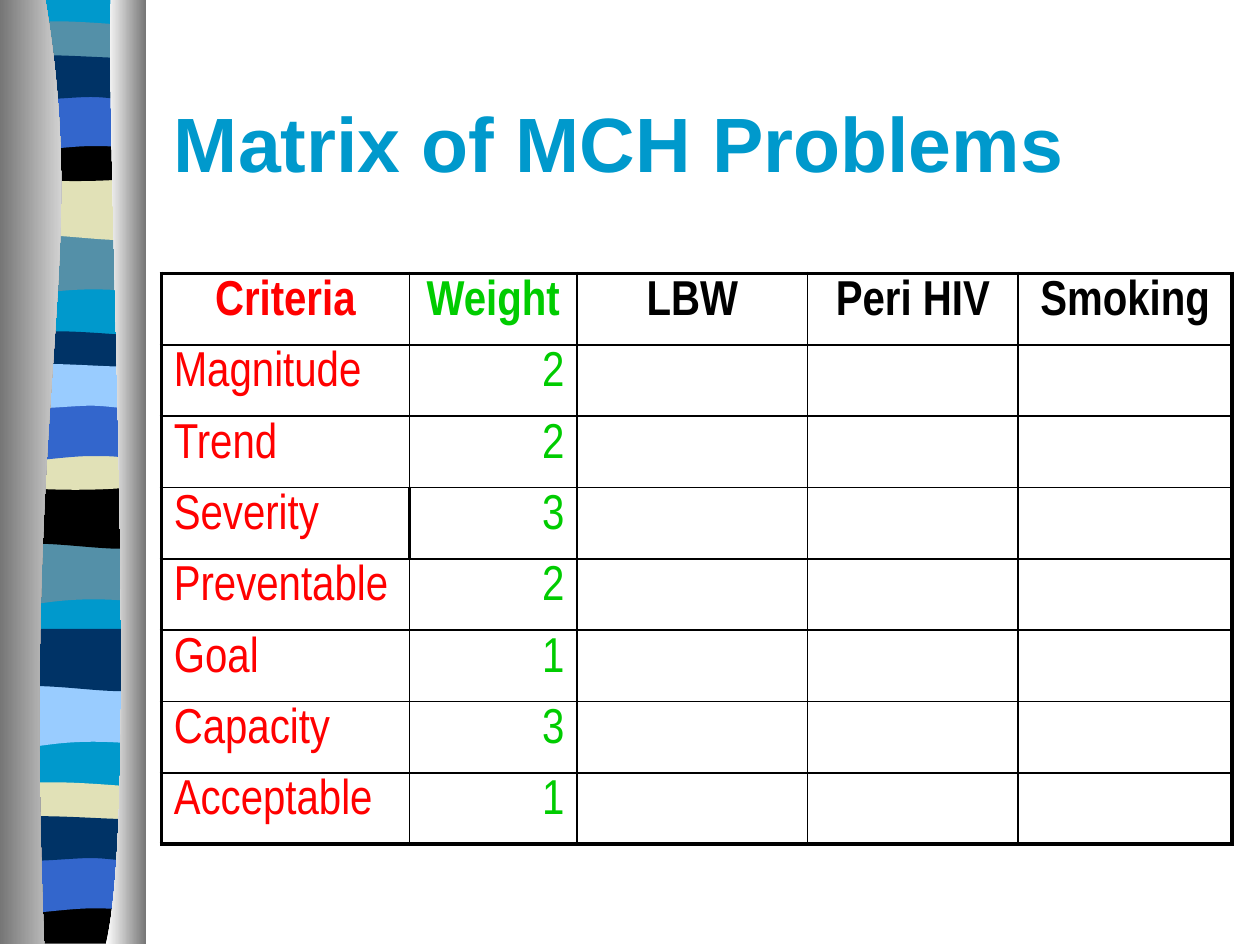
from lxml import etree
from pptx import Presentation
from pptx.dml.color import RGBColor
from pptx.enum.shapes import MSO_SHAPE
from pptx.enum.text import MSO_ANCHOR, PP_ALIGN
from pptx.oxml.ns import qn
from pptx.util import Inches, Pt

LEFT, CENTER, RIGHT = PP_ALIGN.LEFT, PP_ALIGN.CENTER, PP_ALIGN.RIGHT
RED, GREEN = RGBColor(0xFF, 0, 0), RGBColor(0, 0xCC, 0)
BLACK, CYAN = RGBColor(0, 0, 0), RGBColor(0, 0x99, 0xCC)
TEAL, SAND = RGBColor(0x54, 0x90, 0xA8), RGBColor(0xE1, 0xE1, 0xB7)
BLUE, NAVY = RGBColor(0x33, 0x66, 0xCC), RGBColor(0, 0x33, 0x66)
SKY, WHITE = RGBColor(0x99, 0xCC, 0xFF), RGBColor(0xFF, 0xFF, 0xFF)
GRAY = RGBColor(0x76, 0x76, 0x76)

# Content
TITLE = "Matrix of MCH Problems"
HEADS = [("Criteria", RED), ("Weight", GREEN), ("LBW", BLACK),
         ("Peri HIV", BLACK), ("Smoking", BLACK)]
ROWS = [("Magnitude", 2), ("Trend", 2), ("Severity", 3), ("Preventable", 2),
        ("Goal", 1), ("Capacity", 3), ("Acceptable", 1)]
COLS = [1.97, 1.33, 1.83, 1.67, 1.7]
X, WIDE = 1.28, 8.5
TOP, TALL = 2.17, 4.53
THIN, THICK = 1, 2.25

# Wave edges: Bezier points below a band's top; two points make a straight line
L, R = 0.05, 1.14
FLAT = [(L, 0), (R, 0)]
SAG = [(L, 0), (0.72, 0.05), (0.91, 0), (R, 0)]
CREST = [(L, 0), (0.12, -0.05), (0.29, -0.04), (0.47, -0.04),
         (0.65, -0.04), (1, -0.01), (R, 0)]
RIPPLE = [(L, 0), (0.2, -0.05), (0.79, 0), (0.97, 0),
          (1.15, 0), (1.1, 0), (R, 0)]
BOWL = [(R, 0), (0.96, 0.05), (0.24, 0.05), (L, 0)]
WAVES = {  # top edge, bottom edge, height
    "swell": (FLAT, [(R, 0), (0.39, -0.08), (0.24, 0.08), (L, 0)], 0.47),
    "dip": (FLAT, [(R, 0), (0.96, 0.08), (0.39, -0.06), (L, 0)], 0.47),
    "crest": (CREST, BOWL, 0.24),
    "sag": (SAG, BOWL, 0.32),
    "arch": (FLAT, [(R, 0), (0.97, -0.05), (0.9, -0.05), (0.72, -0.05),
                    (0.54, -0.05), (0.22, 0), (L, 0)], 0.47),
    "ripple": (RIPPLE, [(R, 0), (1.07, 0.05), (0.9, 0), (0.72, 0),
                        (0.54, 0), (0.17, 0.05), (L, 0)], 0.31),
    "floor": (SAG, FLAT[::-1], 0.37),
}
BANDS = [  # wave, top, colour, from back to front
    ("swell", 1.85, TEAL), ("dip", 1.41, SAND), ("crest", 0.21, TEAL),
    ("sag", 1.08, BLACK), ("arch", 0.74, BLUE), ("ripple", 0.46, NAVY),
    ("swell", 4.31, TEAL), ("dip", 3.86, BLACK), ("crest", 2.67, NAVY),
    ("sag", 3.53, SAND), ("arch", 3.2, BLUE), ("ripple", 2.91, SKY),
    ("swell", 5.44, SKY), ("dip", 4.99, NAVY), ("crest", 6.25, SAND),
    ("floor", 7.12, BLACK), ("arch", 6.79, BLUE), ("ripple", 6.5, NAVY),
]
DRAPES = [  # outer x, inner edge, colours from left to right
    (0, [(0.36, 0), (0.72, 2.16), (0.17, 2.96), (0.35, 7.49)], GRAY, WHITE),
    (1.16, [(0.88, 0), (0.84, 1.25), (1.11, 6.46), (0.84, 7.49)], WHITE, GRAY),
]


def strip(shape):
    shape.shadow.inherit = False
    shape.line.fill.background()
    return shape.fill


def outline(slide, *edges):
    """Closed shape; each edge of more than two points becomes cubic curves."""
    pts = [(Inches(x), Inches(y)) for edge in edges for x, y in edge]
    pen = slide.shapes.build_freeform(*pts[0])
    pen.add_line_segments(pts[1:], close=True)
    shape = pen.convert_to_shape()
    route = shape._element.find(".//" + qn("a:path"))
    nodes, start = list(route), 0
    for edge in edges:
        end = start + len(edge)
        if len(edge) > 2:
            for i in range(start + 1, end, 3):
                curve = etree.Element(qn("a:cubicBezTo"))
                nodes[i].addprevious(curve)
                for node in nodes[i:i + 3]:
                    curve.append(node[0])
                    route.remove(node)
        start = end
    return strip(shape)


def draw_side(slide):
    base = strip(slide.shapes.add_shape(
        MSO_SHAPE.RECTANGLE, Inches(L), 0, Inches(R - L), Inches(7.47)))
    base.solid()
    base.fore_color.rgb = CYAN
    for wave, y, color in BANDS:
        top, low, high = WAVES[wave]
        fill = outline(slide, [(x, y + d) for x, d in top],
                       [(x, y + high + d) for x, d in low])
        fill.solid()
        fill.fore_color.rgb = color
    for x, edge, first, last in DRAPES:
        fill = outline(slide, edge, [(x, 7.49), (x, 0)])
        fill.gradient()
        fill.gradient_angle = 0
        for stop, color in zip(fill.gradient_stops, (first, last)):
            stop.color.rgb = color


def set_lines(cell, sizes):
    props = cell._tc.get_or_add_tcPr()
    for i, (side, size) in enumerate(zip("LRTB", sizes)):
        line = etree.Element(qn(f"a:ln{side}"), w=str(Pt(size)))
        fill = etree.SubElement(line, qn("a:solidFill"))
        etree.SubElement(fill, qn("a:srgbClr"), val=str(BLACK))
        props.insert(i, line)


def draw_table(slide):
    count, last = len(ROWS) + 1, len(COLS) - 1
    table = slide.shapes.add_table(count, len(COLS), Inches(X), Inches(TOP),
                                   Inches(WIDE), Inches(TALL)).table
    table.first_row = table.horz_banding = False
    for col, wide in zip(table.columns, COLS):
        col.width = Inches(wide)
    grid = [[text for text, _ in HEADS]]
    grid += [[name, str(weight), "", "", ""] for name, weight in ROWS]
    for r, row in enumerate(grid):
        for c, text in enumerate(row):
            cell = table.cell(r, c)
            cell.fill.background()
            split = row[0] == "Severity"  # heavier line beside this name
            heavy = (c == 0 or split and c == 1, c == last or split and c == 0,
                     r == 0, r == count - 1)
            set_lines(cell, [THICK if h else THIN for h in heavy])
            if text:
                cell.text = text
                para = cell.text_frame.paragraphs[0]
                para.alignment = CENTER if r == 0 else (LEFT, RIGHT)[c]
                font = para.font
                font.name, font.size, font.bold = "Arial Narrow", Pt(28), r == 0
                font.color.rgb = HEADS[c][1]


def main():
    deck = Presentation()
    deck.slide_width, deck.slide_height = Inches(10), Inches(7.5)
    slide = deck.slides.add_slide(deck.slide_layouts[5])
    draw_side(slide)

    # Title
    title = slide.shapes.title
    title.left, title.top = Inches(X), Inches(0.5)
    title.width, title.height = Inches(WIDE), Inches(1.25)
    title.text = TITLE
    title.text_frame.vertical_anchor = MSO_ANCHOR.MIDDLE
    para = title.text_frame.paragraphs[0]
    para.alignment = LEFT
    para.font.name, para.font.size, para.font.bold = "Arial", Pt(44), True
    para.font.color.rgb = CYAN

    draw_table(slide)
    deck.save("out.pptx")


if __name__ == "__main__":
    main()
